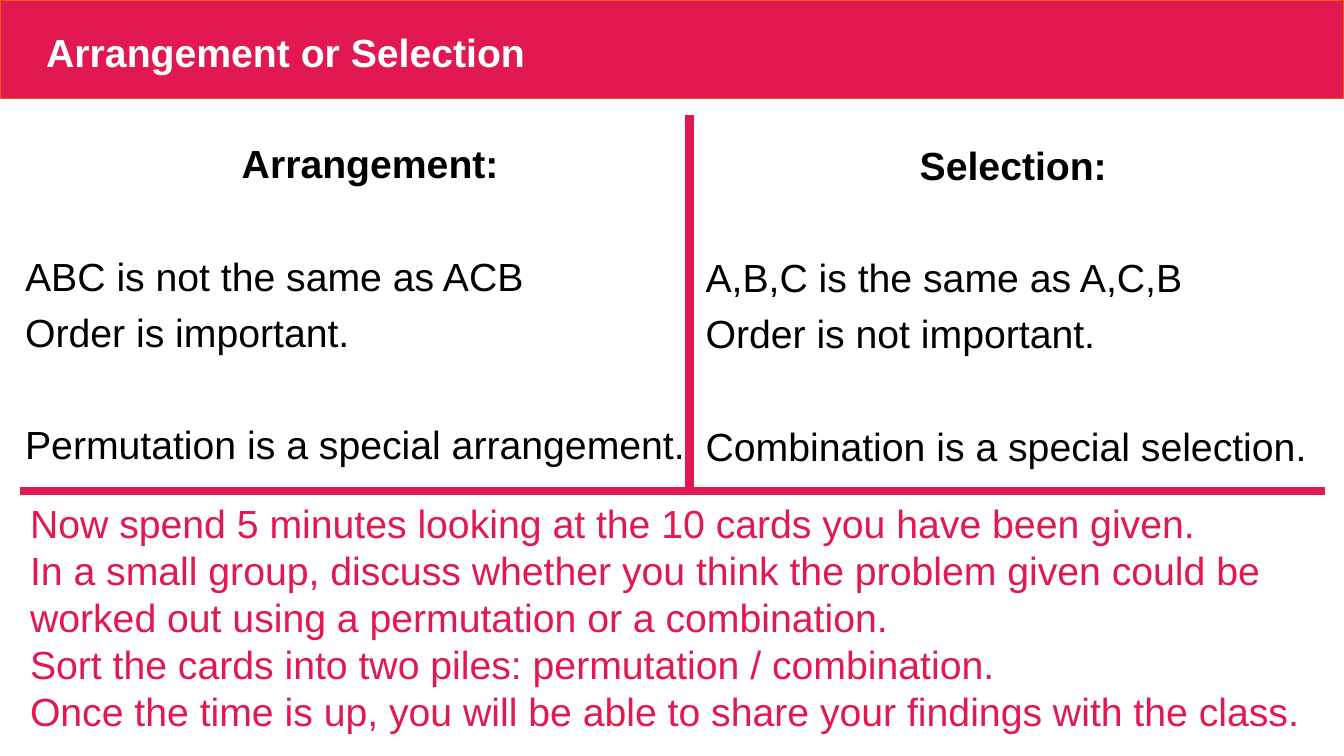
from dataclasses import dataclass

from lxml.etree import SubElement
from pptx import Presentation
from pptx.dml.color import RGBColor
from pptx.enum.shapes import MSO_CONNECTOR, MSO_SHAPE
from pptx.enum.text import MSO_ANCHOR, MSO_AUTO_SIZE, PP_ALIGN
from pptx.oxml.ns import qn
from pptx.util import Inches, Pt


@dataclass(frozen=True)
class Theme:
    accent: RGBColor = RGBColor.from_string("E21951")
    border: RGBColor = RGBColor.from_string("EA5B0C")
    ink: RGBColor = RGBColor.from_string("000000")
    paper: RGBColor = RGBColor.from_string("FFFFFF")
    font: str = "Arial"
    text_size: int = 28
    rule_width: int = 6
    border_width: int = 1
    tight: float = 0.9
    gap: int = 10
    section_gap: int = 50


class SlideBuilder:
    """Places elements on one slide; lengths are percentages of its size."""

    def __init__(self, presentation, theme):
        self.width = presentation.slide_width
        self.height = presentation.slide_height
        self.theme = theme
        self.slide = presentation.slides.add_slide(presentation.slide_layouts[6])

    def emu(self, x, y):
        return round(self.width * x / 100), round(self.height * y / 100)

    def band(self, x, y, width, height):
        banner = self.slide.shapes.add_shape(
            MSO_SHAPE.RECTANGLE, *self.emu(x, y), *self.emu(width, height))
        banner.shadow.inherit = False
        banner.fill.solid()
        banner.fill.fore_color.rgb = self.theme.accent
        banner.line.color.rgb = self.theme.border
        banner.line.width = Pt(self.theme.border_width)

    def text_frame(self, x, y, width, height, anchor=MSO_ANCHOR.TOP, grow=False):
        frame = self.slide.shapes.add_textbox(
            *self.emu(x, y), *self.emu(width, height)).text_frame
        frame.word_wrap = True
        frame.vertical_anchor = anchor
        frame.auto_size = MSO_AUTO_SIZE.SHAPE_TO_FIT_TEXT if grow else MSO_AUTO_SIZE.NONE
        return frame

    def put_text(self, frame, text, color, bold=False, align=PP_ALIGN.LEFT,
                 spacing=1.0, before=0):
        """Fill the frame's empty first paragraph, or append another."""
        first = frame.paragraphs[0]
        paragraph = frame.add_paragraph() if first.runs else first
        paragraph.alignment = align
        paragraph.line_spacing = spacing
        paragraph.space_before = Pt(before)
        run = paragraph.add_run()
        run.text = text
        run.font.name = self.theme.font
        run.font.size = Pt(self.theme.text_size)
        run.font.bold = bold
        run.font.color.rgb = color

    def definition(self, box, heading, example, order, special_case):
        theme = self.theme
        frame = self.text_frame(*box)
        self.put_text(frame, heading, theme.ink, bold=True, align=PP_ALIGN.CENTER,
                      spacing=theme.tight, before=theme.gap)
        for line, before in ((example, theme.section_gap), (order, theme.gap),
                             (special_case, theme.section_gap)):
            self.put_text(frame, line, theme.ink, spacing=theme.tight, before=before)

    def rule(self, start, end):
        divider = self.slide.shapes.add_connector(
            MSO_CONNECTOR.STRAIGHT, *self.emu(*start), *self.emu(*end))
        divider.line.color.rgb = self.theme.accent
        divider.line.width = Pt(self.theme.rule_width)
        SubElement(divider.element.spPr, qn("a:effectLst"))


def main():
    presentation = Presentation()
    presentation.slide_width = Inches(13.33)
    presentation.slide_height = Inches(7.5)
    theme = Theme()
    builder = SlideBuilder(presentation, theme)

    builder.band(0, 0, 100, 13.07)
    title = builder.text_frame(2.7, 2.53, 94.52, 8.13, anchor=MSO_ANCHOR.BOTTOM)
    builder.put_text(title, "Arrangement or Selection", theme.paper, bold=True,
                     spacing=theme.tight)

    builder.definition(
        (1.13, 18.53, 52.81, 46.4), "Arrangement:", "ABC is not the same as ACB",
        "Order is important.", "Permutation is a special arrangement.")
    builder.definition(
        (51.76, 18.67, 47.26, 77.6), "Selection:", "A,B,C is the same as A,C,B",
        "Order is not important.", "Combination is a special selection.")

    left, width, floor, middle = 1.5, 97.07, 64.93, 51.31
    activity = builder.text_frame(left, 65.33, width, 32.8, grow=True)
    for instruction in (
        "Now spend 5 minutes looking at the 10 cards you have been given.",
        "In a small group, discuss whether you think the problem given could be "
        "worked out using a permutation or a combination.",
        "Sort the cards into two piles: permutation / combination.",
        "Once the time is up, you will be able to share your findings with the class.",
    ):
        builder.put_text(activity, instruction, theme.accent)

    builder.rule((middle, 15.2), (middle, floor))
    builder.rule((left, floor), (left + width, floor))
    presentation.save("out.pptx")


if __name__ == "__main__":
    main()
